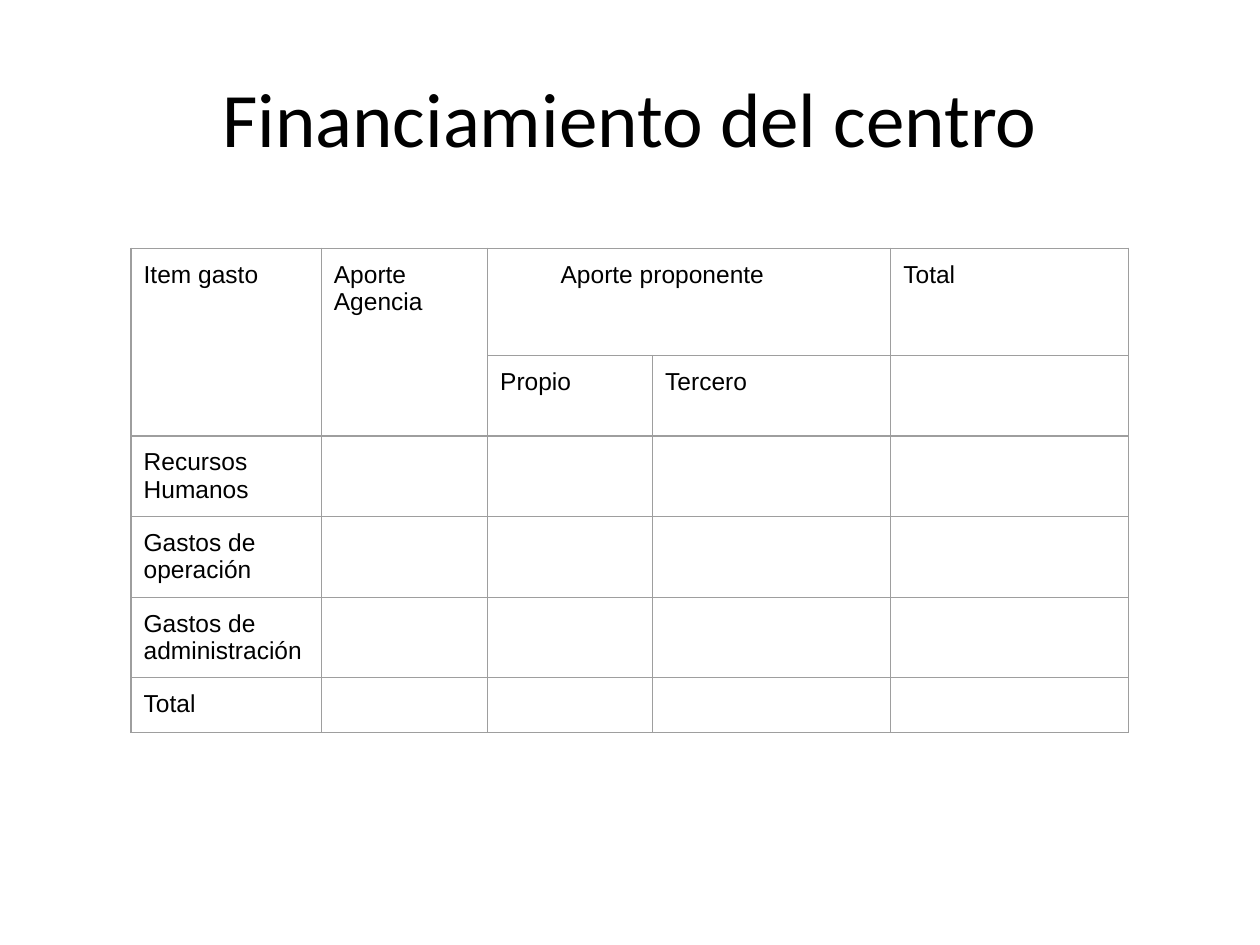
from pptx import Presentation
from pptx.dml.color import RGBColor
from pptx.enum import text
from pptx.oxml import parse_xml
from pptx.oxml.ns import nsdecls
from pptx.util import Inches, Pt

HUES = {"ink": "000000", "rule": "9E9E9E"}
COLS = [1.51, 1.32, 1.31, 1.89, 1.89]
ROWS = [0.85, 0.64, 0.64, 0.64, 0.64, 0.42]
CELLS = [
    ["Item gasto", "Aporte Agencia", "Aporte proponente", "", "Total"],
    ["", "", "Propio", "Tercero", ""],
    ["Recursos Humanos", "", "", "", ""],
    ["Gastos de operación", "", "", "", ""],
    ["Gastos de administración", "", "", "", ""],
    ["Total", "", "", "", ""],
]
SPANS = [((0, 0), (1, 0)), ((0, 1), (1, 1)), ((0, 2), (0, 3))]
SIDES = ["left", "right", "top", "bottom"]
PAD = 0.1
INDENT = 0.58


def style(font, name, size):
    form = {"name": name, "size": Pt(size)}
    for key, val in form.items():
        setattr(font, key, val)
    font.color.rgb = RGBColor.from_string(HUES["ink"])


def add_title(slide, box):
    title = slide.shapes.title
    for key, val in zip(["left", "top", "width", "height"], box):
        setattr(title, key, Inches(val))
    frame = title.text_frame
    frame.text = "Financiamiento del centro"
    frame.vertical_anchor = text.MSO_ANCHOR.MIDDLE
    line = frame.paragraphs[0]
    line.alignment = text.PP_ALIGN.CENTER
    style(line.runs[0].font, "Calibri", 44)


def set_rules(cell):
    """Draw a thin rule on all four sides of the cell."""
    props = cell._tc.get_or_add_tcPr()
    for side in SIDES:
        tag = "ln" + side[0].upper()
        props.append(parse_xml(
            f'<a:{tag} {nsdecls("a")} w="{Pt(0.75)}"><a:solidFill>'
            f'<a:srgbClr val="{HUES["rule"]}"/></a:solidFill></a:{tag}>'))


def fill_cell(cell, words):
    set_rules(cell)
    cell.fill.background()
    for side in SIDES:
        setattr(cell, "margin_" + side, Inches(PAD))
    line = cell.text_frame.paragraphs[0]
    if words:
        run = line.add_run()
        run.text = words
        style(run.font, "Arial", 14)
    else:
        # An empty cell keeps its row low only if its end mark is small
        line._p.append(parse_xml(f'<a:endParaRPr {nsdecls("a")} sz="1400"/>'))


def add_costs(slide, left, top):
    """Place the table of costs and who pays for them."""
    frame = slide.shapes.add_table(
        len(ROWS), len(COLS), Inches(left), Inches(top),
        Inches(sum(COLS)), Inches(sum(ROWS)))
    table = frame.table
    table.first_row = table.horz_banding = False
    for col, width in zip(table.columns, COLS):
        col.width = Inches(width)
    for row, high, words in zip(table.rows, ROWS, CELLS):
        row.height = Inches(high)
        for cell, word in zip(row.cells, words):
            fill_cell(cell, word)
    for first, last in SPANS:
        table.cell(*first).merge(table.cell(*last))
    table.cell(0, 2).margin_left = Inches(INDENT)


def main():
    deck = Presentation()
    deck.slide_width, deck.slide_height = Inches(10), Inches(7.5)
    slide = deck.slides.add_slide(deck.slide_layouts[5])
    add_title(slide, (0.5, 0.3, 9, 1.25))
    add_costs(slide, 1.04, 1.97)
    deck.save("out.pptx")


if __name__ == "__main__":
    main()
